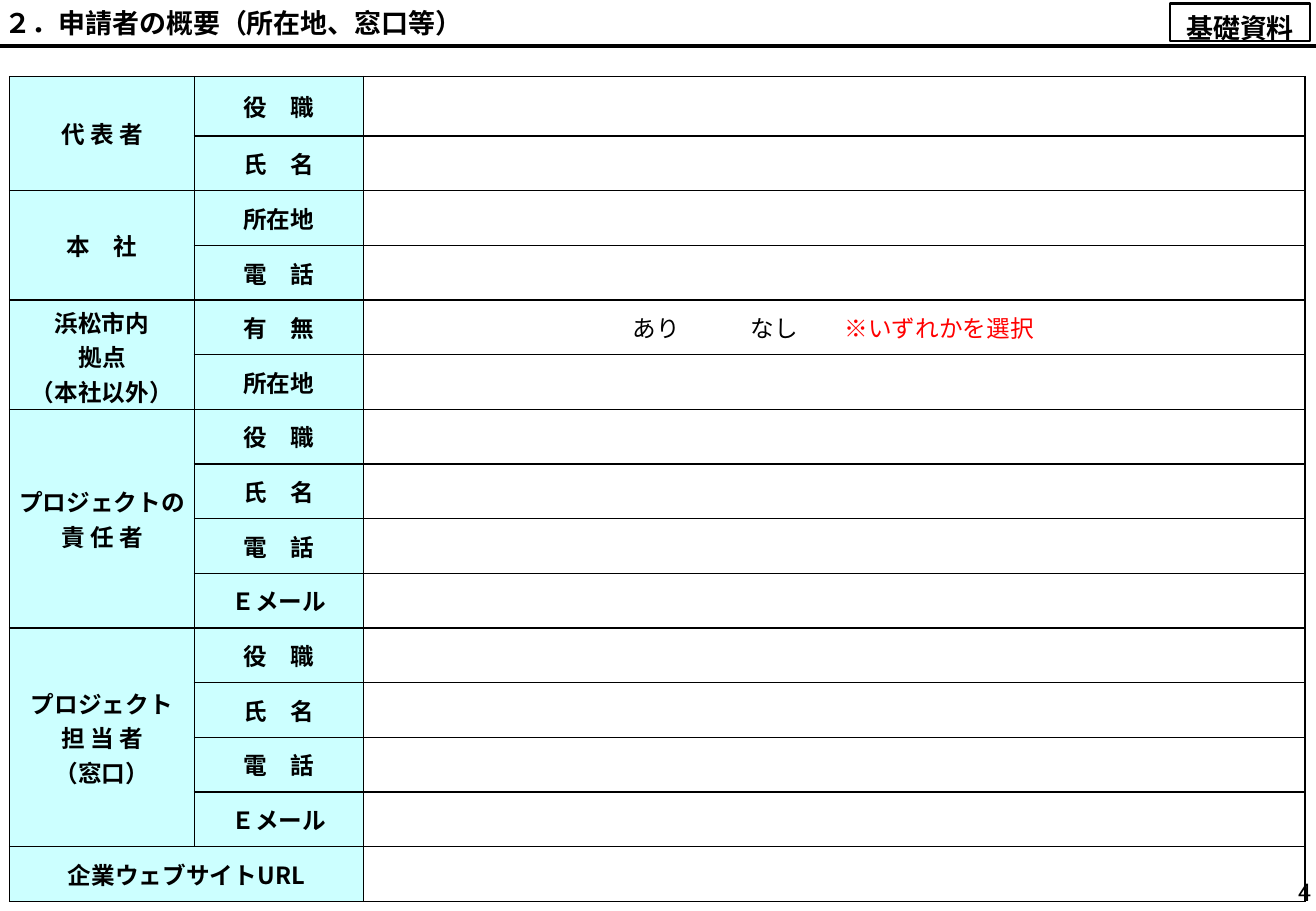
from lxml.etree import SubElement
from pptx import Presentation
from pptx.dml.color import RGBColor
from pptx.enum.shapes import MSO_CONNECTOR, MSO_SHAPE
from pptx.enum.text import MSO_ANCHOR, PP_ALIGN
from pptx.oxml.ns import qn
from pptx.util import Inches, Pt

FONT = "Noto Sans CJK JP"
BLACK = RGBColor(0x00, 0x00, 0x00)
RED = RGBColor(0xFF, 0x00, 0x00)
LABEL_FILL = RGBColor(0xCC, 0xFF, 0xFF)
SLIDE_WIDTH, SLIDE_HEIGHT = 10.83, 7.5
INSET = Inches(0.04)

COLUMN_WIDTHS = (1.52, 1.39, 7.75)
FIRST_ROW_HEIGHT, ROW_HEIGHT = 0.49, 0.45
CONTACT_FIELDS = ("役　職", "氏　名", "電　話", "Ｅメール")
SECTIONS = (
    (("代 表 者",), ("役　職", "氏　名")),
    (("本　社",), ("所在地", "電　話")),
    (("浜松市内", "拠点", "（本社以外）"), ("有　無", "所在地")),
    (("プロジェクトの", "責 任 者"), CONTACT_FIELDS),
    (("プロジェクト", "担 当 者", "（窓口）"), CONTACT_FIELDS),
)
WEBSITE_LABEL = "企業ウェブサイトURL"
CHOICE_FIELD = "有　無"
CHOICE_START = 2.22
CHOICE_TABS = (0.97, 1.74)


def add_run(paragraph, text, size=14, bold=True, color=BLACK):
    run = paragraph.add_run()
    run.text = text
    run.font.name = FONT
    run.font.size = Pt(size)
    run.font.bold = bold
    run.font.color.rgb = color
    SubElement(run.font._element, qn("a:ea"), typeface=FONT)


def set_insets(target, top=INSET):
    """Set the margins of a cell or a text frame."""
    target.margin_left = target.margin_right = target.margin_bottom = INSET
    target.margin_top = top
    target.vertical_anchor = MSO_ANCHOR.MIDDLE


def add_text_box(slide, box, text, align, size, bold):
    frame = slide.shapes.add_textbox(*map(Inches, box)).text_frame
    frame.word_wrap = True
    set_insets(frame)
    paragraph = frame.paragraphs[0]
    paragraph.alignment = align
    add_run(paragraph, text, size, bold)


def add_title_rule(slide):
    y = Inches(0.38)
    rule = slide.shapes.add_connector(
        MSO_CONNECTOR.STRAIGHT, 0, y, Inches(SLIDE_WIDTH), y)
    rule.line.color.rgb = BLACK
    rule.line.width = Pt(2)
    SubElement(rule._element.spPr, qn("a:effectLst"))


def add_stamp(slide, text):
    stamp = slide.shapes.add_shape(
        MSO_SHAPE.RECTANGLE, *map(Inches, (9.63, 0.03, 1.15, 0.31)))
    stamp.shadow.inherit = False
    stamp.fill.background()
    stamp.line.color.rgb = BLACK
    stamp.line.width = Pt(1.5)
    set_insets(stamp.text_frame, top=Inches(0.12))
    paragraph = stamp.text_frame.paragraphs[0]
    paragraph.alignment = PP_ALIGN.CENTER
    add_run(paragraph, text, size=16)


def add_borders(cell):
    properties = cell._tc.get_or_add_tcPr()
    for side in ("lnL", "lnR", "lnT", "lnB"):
        border = SubElement(properties, qn(f"a:{side}"), w=str(Pt(1)))
        fill = SubElement(border, qn("a:solidFill"))
        SubElement(fill, qn("a:srgbClr"), val=str(BLACK))


def style_cell(cell, is_label):
    set_insets(cell)
    add_borders(cell)
    if is_label:
        cell.fill.solid()
        cell.fill.fore_color.rgb = LABEL_FILL
    else:
        cell.fill.background()
    cell.text_frame.paragraphs[0].font.size = Pt(14)


def write_label(cell, *lines):
    frame = cell.text_frame
    for index, line in enumerate(lines):
        paragraph = frame.add_paragraph() if index else frame.paragraphs[0]
        paragraph.alignment = PP_ALIGN.CENTER
        add_run(paragraph, line)


def write_choice(cell):
    """Set the two options and the hint on tab stops."""
    cell.margin_left = Inches(CHOICE_START)
    paragraph = cell.text_frame.paragraphs[0]
    paragraph.alignment = PP_ALIGN.LEFT
    stops = SubElement(paragraph._p.get_or_add_pPr(), qn("a:tabLst"))
    for position in CHOICE_TABS:
        SubElement(stops, qn("a:tab"), pos=str(Inches(position)), algn="l")
    # Tab stops come before the default run properties in the schema.
    stops.getparent().insert(0, stops)
    add_run(paragraph, "あり\tなし\t", bold=False)
    add_run(paragraph, "※いずれかを選択", bold=False, color=RED)


def add_applicant_table(slide):
    row_count = sum(len(fields) for _, fields in SECTIONS) + 1
    table = slide.shapes.add_table(
        row_count, len(COLUMN_WIDTHS),
        *map(Inches, (0.08, 0.63, 10.66, 6.79))).table
    table.first_row = table.horz_banding = False
    for column, width in zip(table.columns, COLUMN_WIDTHS):
        column.width = Inches(width)
    for index, row in enumerate(table.rows):
        row.height = Inches(ROW_HEIGHT if index else FIRST_ROW_HEIGHT)
        for column_index, cell in enumerate(row.cells):
            style_cell(cell, is_label=column_index < 2)

    top = 0
    for heading, fields in SECTIONS:
        table.cell(top, 0).merge(table.cell(top + len(fields) - 1, 0))
        write_label(table.cell(top, 0), *heading)
        for row_index, field in enumerate(fields, top):
            write_label(table.cell(row_index, 1), field)
            if field == CHOICE_FIELD:
                write_choice(table.cell(row_index, 2))
        top += len(fields)
    table.cell(top, 0).merge(table.cell(top, 1))
    write_label(table.cell(top, 0), WEBSITE_LABEL)


def main():
    deck = Presentation()
    deck.slide_width = Inches(SLIDE_WIDTH)
    deck.slide_height = Inches(SLIDE_HEIGHT)
    slide = deck.slides.add_slide(deck.slide_layouts[6])
    add_text_box(slide, (9.85, 7.18, 0.98, 0.32), "4",
                 PP_ALIGN.RIGHT, size=14, bold=False)
    add_text_box(slide, (0, 0, SLIDE_WIDTH, 0.38),
                 "２．申請者の概要（所在地、窓口等）",
                 PP_ALIGN.LEFT, size=16, bold=True)
    add_applicant_table(slide)
    add_title_rule(slide)
    add_stamp(slide, "基礎資料")
    deck.save("out.pptx")


if __name__ == "__main__":
    main()
